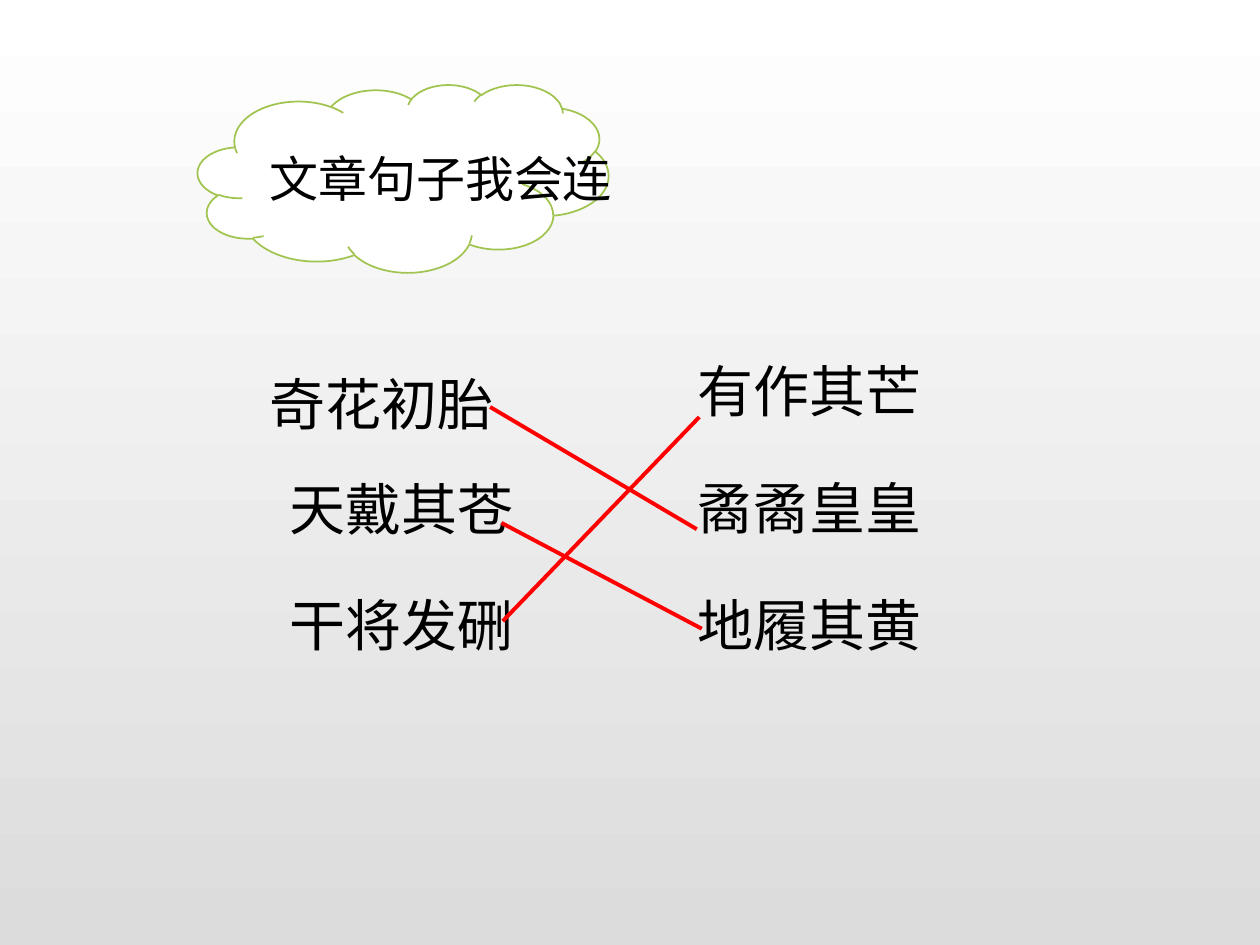
from lxml import etree
from pptx import Presentation
from pptx import util as u
from pptx.dml.color import RGBColor
from pptx.enum import shapes, text
from pptx.oxml import ns

COLORS = {
    "top": "FFFFFF",
    "bottom": "DCDCDC",
    "cloud": "FFFFFF",
    "outline": "A1C450",
    "text": "000000",
    "match": "FF0000",
}
FONT = "Noto Sans CJK SC"


def color(name):
    return RGBColor.from_string(COLORS[name])


class MatchingSlide:
    """Holds the style and the slide being filled; lengths are in inches."""

    def __init__(self, slide):
        self.slide = slide
        self.phrase_size = u.Pt(32)
        self.match_width = u.Pt(2.25)

    def background(self):
        fill = self.slide.background.fill
        fill.gradient()
        fill.gradient_angle = 270
        for stop, name in zip(fill.gradient_stops, ("top", "bottom")):
            stop.color.rgb = color(name)

    def cloud(self, *box):
        shape = self.slide.shapes.add_shape(
            shapes.MSO_SHAPE.CLOUD, *map(u.Inches, box))
        shape.shadow.inherit = False
        shape.fill.solid()
        shape.fill.fore_color.rgb = color("cloud")
        shape.line.color.rgb = color("outline")
        shape.line.width = u.Pt(1)

    def phrase(self, wording, *box, size=None, line_spacing=None):
        frame = self.slide.shapes.add_textbox(*map(u.Inches, box)).text_frame
        frame.word_wrap = True
        frame.auto_size = text.MSO_AUTO_SIZE.SHAPE_TO_FIT_TEXT
        frame.text = wording
        paragraph = frame.paragraphs[0]
        if line_spacing:
            paragraph.line_spacing = line_spacing
        run = paragraph.runs[0]
        run.font.size = size or self.phrase_size
        run.font.color.rgb = color("text")
        run.font.name = FONT
        east_asian = etree.SubElement(run.font._element, ns.qn("a:ea"))
        east_asian.set("typeface", FONT)

    def match(self, *ends):
        connector = self.slide.shapes.add_connector(
            shapes.MSO_CONNECTOR.STRAIGHT, *map(u.Inches, ends))
        connector.line.color.rgb = color("match")
        connector.line.width = self.match_width
        etree.SubElement(connector._element.spPr, ns.qn("a:effectLst"))


def main():
    presentation = Presentation()
    presentation.slide_width = u.Inches(10)
    presentation.slide_height = u.Inches(7.5)
    page = MatchingSlide(
        presentation.slides.add_slide(presentation.slide_layouts[6]))

    page.background()
    page.cloud(1.57, 0.67, 3.26, 1.49)
    page.phrase("文章句子我会连", 2.04, 1.13, 3.07, 0.57, size=u.Pt(28))

    page.phrase("奇花初胎", 2.04, 2.62, 2.24, 0.91, line_spacing=1.5)
    page.phrase("天戴其苍", 2.2, 3.72, 2.08, 0.64)
    page.phrase("干将发硎", 2.2, 4.64, 2.01, 0.64)
    for row, wording in enumerate(("有作其芒", "矞矞皇皇", "地履其黄")):
        page.phrase(wording, 5.44, 2.78 + 0.93 * row, 2.1, 0.64)

    for ends in ((3.98, 4.15, 5.57, 4.99),
                 (3.99, 4.93, 5.55, 3.31),
                 (3.89, 3.23, 5.53, 4.2)):
        page.match(*ends)

    presentation.save("out.pptx")


if __name__ == "__main__":
    main()
